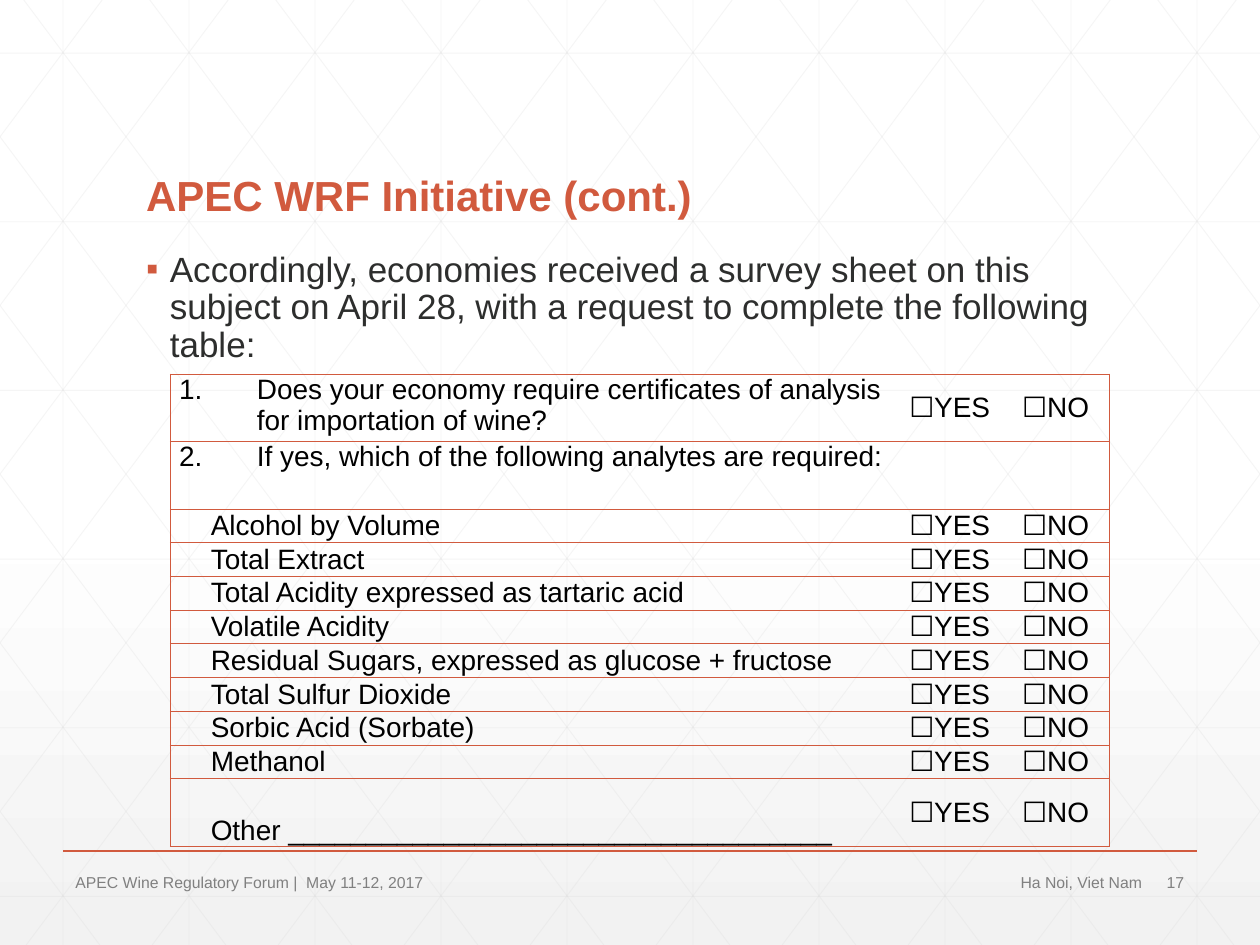
from dataclasses import dataclass
from typing import NamedTuple

from lxml.etree import SubElement
from pptx import Presentation
from pptx.dml.color import RGBColor
from pptx.enum.shapes import MSO_CONNECTOR
from pptx.enum.text import MSO_ANCHOR, MSO_AUTO_SIZE, PP_ALIGN
from pptx.oxml.ns import qn
from pptx.util import Cm, Pt

WIDE, HIGH = 25.4, 19.05


@dataclass(frozen=True)
class Theme:
    font: str = "Arial"
    accent: str = "D15A3E"
    body: str = "2D2E2D"
    cell: str = "000000"
    muted: str = "808080"
    mesh: str = "D9D9D9"
    paper: str = "FFFFFF"
    shade: str = "F2F2F2"
    title_pt: int = 24
    body_pt: int = 20
    cell_pt: int = 16
    foot_pt: int = 9


THEME = Theme()


class Box(NamedTuple):
    left: float
    top: float
    width: float
    height: float


class Note(NamedTuple):
    text: str
    box: Box
    align: PP_ALIGN = PP_ALIGN.LEFT


class Row(NamedTuple):
    text: str
    number: int = 0
    tall: bool = False
    asks: bool = True
    anchor: MSO_ANCHOR = MSO_ANCHOR.MIDDLE


NOTES = [
    Note("17", Box(23.27, 17.48, 0.94, 0.61)),
    Note("APEC Wine Regulatory Forum |  May 11-12, 2017", Box(1.27, 17.48, 12.78, 0.61)),
    Note("Ha Noi, Viet Nam", Box(14.17, 17.48, 9.1, 0.61), PP_ALIGN.RIGHT),
]
ANALYTES = [
    "Alcohol by Volume",
    "Total Extract",
    "Total Acidity expressed as tartaric acid",
    "Volatile Acidity",
    "Residual Sugars, expressed as glucose + fructose",
    "Total Sulfur Dioxide",
    "Sorbic Acid (Sorbate)",
    "Methanol",
]
ROWS = [
    Row("Does your economy require certificates of analysis for importation of wine?",
        number=1, tall=True, anchor=MSO_ANCHOR.TOP),
    Row("If yes, which of the following analytes are required:",
        number=2, tall=True, asks=False, anchor=MSO_ANCHOR.TOP),
    *[Row(name) for name in ANALYTES],
    Row("Other " + "_" * 35, tall=True, anchor=MSO_ANCHOR.BOTTOM),
]
COLS = [14.66, 2.11, 2.16]
ROW_HIGH = 0.68


def write(frame, text: str, *, size: float, color: str, bold: bool = False,
          align=PP_ALIGN.LEFT, anchor=MSO_ANCHOR.TOP, left: float = 0,
          hang: float = 0, bullet: str = "", number: int = 0,
          lines: float = 1, before: float = 0) -> None:
    """Set one paragraph; left and hang are its indents in centimetres."""
    frame.word_wrap = True
    frame.vertical_anchor = anchor
    para = frame.paragraphs[0]
    para.alignment, para.line_spacing, para.space_before = align, lines, Pt(before)
    run = para.add_run()
    run.text = text
    font = run.font
    font.name, font.size, font.bold = THEME.font, Pt(size), bold
    font.color.rgb = RGBColor.from_string(color)
    props = para._p.get_or_add_pPr()
    props.set("marL", str(Cm(left)))
    props.set("indent", str(Cm(-hang)))
    if bullet:
        tint = SubElement(props, qn("a:buClr"))
        SubElement(tint, qn("a:srgbClr"), val=THEME.accent)
        SubElement(props, qn("a:buFont"), typeface=THEME.font)
        SubElement(props, qn("a:buChar"), char=bullet)
    elif number:
        SubElement(props, qn("a:buAutoNum"), type="arabicPeriod", startAt=str(number))


def place(shape, box: Box) -> None:
    shape.left, shape.top, shape.width, shape.height = map(Cm, box)


def rule(shapes, start: tuple[float, float], end: tuple[float, float],
         color: str, width: float, alpha: int = 100) -> None:
    line = shapes.add_connector(MSO_CONNECTOR.STRAIGHT, *map(Cm, (*start, *end)))
    line.line.color.rgb = RGBColor.from_string(color)
    line.line.width = Pt(width)
    if alpha < 100:
        tint = line.element.spPr.find(".//" + qn("a:srgbClr"))
        SubElement(tint, qn("a:alpha"), val=str(alpha * 1000))
    SubElement(line.element.spPr, qn("a:effectLst"))


def mesh(slide):
    """Draw the faint lattice of triangles, clipped to the slide."""
    group = slide.shapes.add_group_shape()
    step, rise = 2.54, 3.4
    slope = rise / step
    ends = [((x, 0), (x, HIGH)) for x in (1.27 + step * i for i in range(10))]
    ends += [((0, y), (WIDE, y)) for y in (1.07 + rise * i for i in range(6))]
    for i in range(-5, 10):
        base = 0.48 + step * i
        left, right = max(base, 0), min(base + HIGH / slope, WIDE)
        top, low = (left - base) * slope, (right - base) * slope
        ends += [((left, top), (right, low)),
                 ((WIDE - left, top), (WIDE - right, low))]
    for start, end in ends:
        rule(group.shapes, start, end, THEME.mesh, 0.5, alpha=25)
    return group


def paint(slide) -> None:
    fill = slide.background.fill
    fill.gradient()
    fill.gradient_angle = 270
    stops = zip(fill.gradient_stops, (THEME.paper, THEME.shade), (0.53, 1))
    for stop, color, place_at in stops:
        stop.color.rgb = RGBColor.from_string(color)
        stop.position = place_at


def edge(cell, sides: str) -> None:
    """Line the named sides (of L, R, T, B) and clear the others."""
    props = cell._tc.get_or_add_tcPr()
    for side in "LRTB":
        line = SubElement(props, qn(f"a:ln{side}"), w=str(Pt(0.5)))
        if side in sides:
            fill = SubElement(line, qn("a:solidFill"))
            SubElement(fill, qn("a:srgbClr"), val=THEME.accent)
        else:
            SubElement(line, qn("a:noFill"))


def survey(slide) -> None:
    highs = [ROW_HIGH * (2 if row.tall else 1) for row in ROWS]
    box = Box(3.43, 7.54, sum(COLS), sum(highs))
    table = slide.shapes.add_table(len(ROWS), len(COLS), *map(Cm, box)).table
    table.first_row = table.horz_banding = False
    for col, width in zip(table.columns, COLS):
        col.width = Cm(width)
    for r, (row, high) in enumerate(zip(ROWS, highs)):
        table.rows[r].height = Cm(high)
        for c, sides in enumerate(("LTB", "TB", "RTB")):
            cell = table.cell(r, c)
            edge(cell, sides if row.asks else "LRTB")
            cell.fill.background()
            cell.margin_left = cell.margin_right = Cm(0.18)
            cell.margin_top = cell.margin_bottom = 0
        if not row.asks:
            table.cell(r, 0).merge(table.cell(r, 2))
        look = dict(size=THEME.cell_pt, color=THEME.cell)
        first = table.cell(r, 0)
        write(first.text_frame, row.text, number=row.number,
              left=1.57 if row.number else 0.64,
              hang=1.57 if row.number else 0, **look)
        first.vertical_anchor = row.anchor
        for c, text in enumerate(("☐YES", "☐NO") if row.asks else (), 1):
            cell = table.cell(r, c)
            write(cell.text_frame, text, align=PP_ALIGN.CENTER, **look)
            cell.vertical_anchor = MSO_ANCHOR.MIDDLE


def main() -> None:
    deck = Presentation()
    deck.slide_width, deck.slide_height = Cm(WIDE), Cm(HIGH)
    slide = deck.slides.add_slide(deck.slide_layouts[1])
    paint(slide)
    title, body = slide.shapes.title, slide.placeholders[1]
    title.element.addprevious(mesh(slide).element)
    rule(slide.shapes, (1.27, 17.15), (24.13, 17.15), THEME.accent, 1)

    place(title, Box(2.69, 1.4, 20.02, 3.18))
    write(title.text_frame, "APEC WRF Initiative (cont.)", size=THEME.title_pt,
          color=THEME.accent, bold=True, anchor=MSO_ANCHOR.BOTTOM, lines=0.9)
    place(body, Box(2.69, 4.95, 20.02, 1.93))
    write(body.text_frame, "Accordingly, economies received a survey sheet on this "
          "subject on April 28, with a request to complete the following table:",
          size=THEME.body_pt, color=THEME.body, left=0.48, hang=0.48,
          bullet="▪", lines=0.9, before=13.5)
    for holder in (title, body):
        holder.text_frame.auto_size = MSO_AUTO_SIZE.NONE

    for note in NOTES:
        box = slide.shapes.add_textbox(*map(Cm, note.box))
        write(box.text_frame, note.text, size=THEME.foot_pt, color=THEME.muted,
              align=note.align, anchor=MSO_ANCHOR.MIDDLE)
    survey(slide)
    deck.save("out.pptx")


if __name__ == "__main__":
    main()
